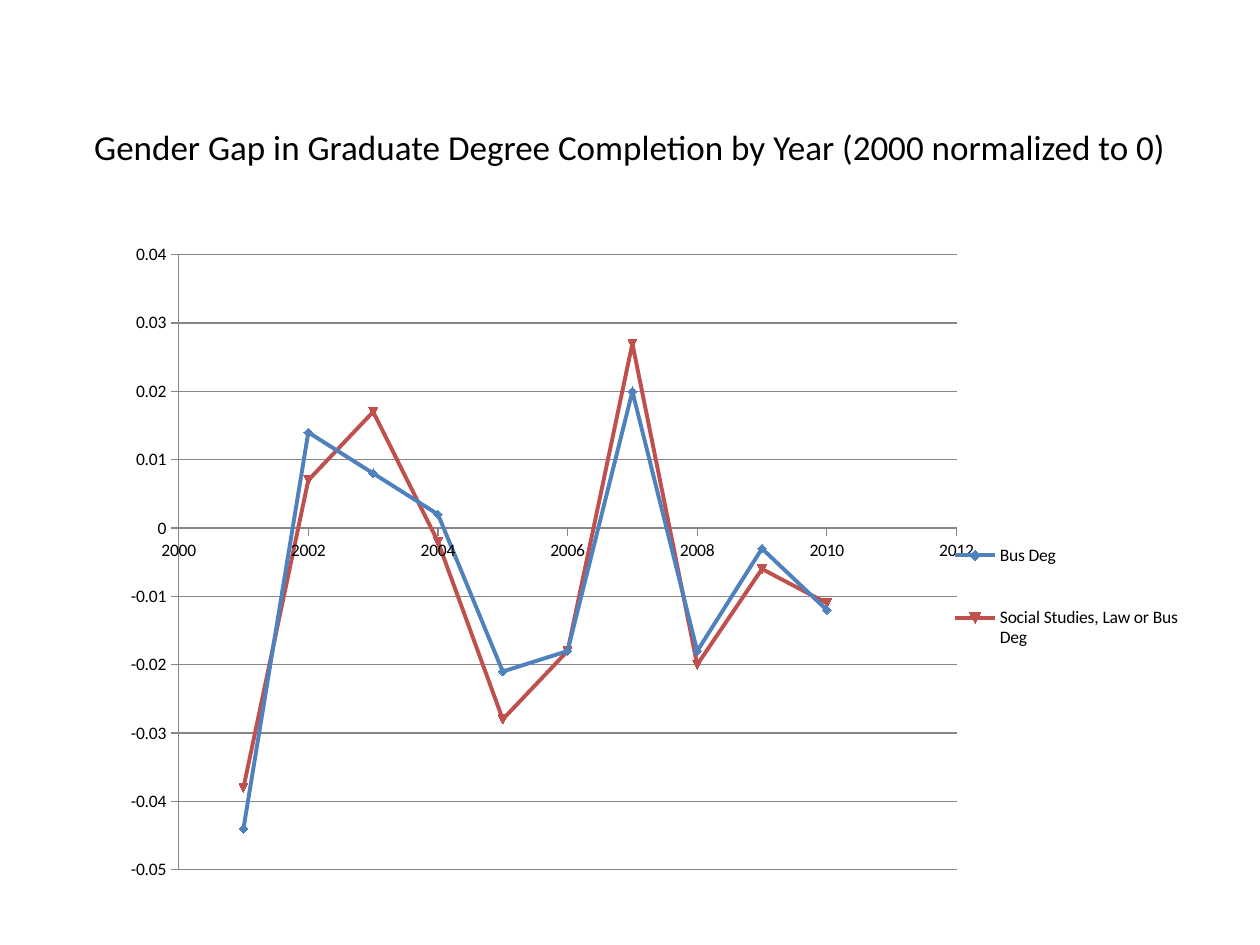
from lxml.etree import SubElement
from pptx import Presentation
from pptx.chart.data import XyChartData
from pptx.dml.color import RGBColor
from pptx.enum.chart import XL_CHART_TYPE, XL_LEGEND_POSITION, XL_MARKER_STYLE, XL_TICK_MARK
from pptx.enum.text import MSO_ANCHOR, PP_ALIGN
from pptx.oxml.ns import qn
from pptx.util import Inches, Pt

COLORS = {"text": "000000", "grid": "868686", "business": "4F81BD", "social": "C0504D"}
FONT = "Calibri"
YEARS = range(2001, 2011)
SERIES = [
    ("Bus Deg", "business", XL_MARKER_STYLE.DIAMOND,
     [-0.044, 0.014, 0.008, 0.002, -0.021, -0.018, 0.02, -0.018, -0.003, -0.012]),
    ("Social Studies, Law or Bus Deg", "social", None,
     [-0.038, 0.007, 0.017, -0.002, -0.028, -0.018, 0.027, -0.02, -0.006, -0.011]),
]


def color(name):
    return RGBColor.from_string(COLORS[name])


def style_font(font, size):
    font.name = FONT
    font.size = Pt(size)
    font.color.rgb = color("text")


def set_layout(parent, before, fractions, inner=False):
    """Place a chart part by fractions of the chart: left, top, width, height."""
    for old in parent.findall(qn("c:layout")):
        parent.remove(old)
    layout = SubElement(parent, qn("c:layout"))
    manual = SubElement(layout, qn("c:manualLayout"))
    settings = [("layoutTarget", "inner")] if inner else []
    settings += [("xMode", "edge"), ("yMode", "edge")]
    settings += zip("xywh", fractions)
    for tag, value in settings:
        SubElement(manual, qn(f"c:{tag}")).set("val", str(value))
    parent.insert(before, layout)


def add_title(page, left, top, width, height):
    box = page.shapes.add_textbox(left, top, width, height)
    frame = box.text_frame
    frame.text = "Gender Gap in Graduate Degree Completion by Year (2000 normalized to 0)"
    frame.word_wrap = True
    frame.vertical_anchor = MSO_ANCHOR.BOTTOM
    frame.margin_bottom = Inches(0.09)
    para = frame.paragraphs[0]
    para.alignment = PP_ALIGN.CENTER
    style_font(para.runs[0].font, 20)


def style_axis(axis, low, high, step, number_format):
    axis.minimum_scale, axis.maximum_scale, axis.major_unit = low, high, step
    axis.major_tick_mark = XL_TICK_MARK.OUTSIDE
    axis.minor_tick_mark = XL_TICK_MARK.NONE
    axis.tick_labels.number_format = number_format
    axis.tick_labels.number_format_is_linked = False
    axis.format.line.color.rgb = color("grid")
    axis.format.line.width = Pt(0.75)


def add_gap_chart(page, left, top, width, height):
    data = XyChartData()
    for name, _, _, values in SERIES:
        series = data.add_series(name)
        for year, value in zip(YEARS, values):
            series.add_data_point(year, value)
    chart = page.shapes.add_chart(
        XL_CHART_TYPE.XY_SCATTER_LINES, left, top, width, height, data).chart
    chart.has_title = False
    style_font(chart.font, 10)

    # Axes and gridlines
    style_axis(chart.category_axis, 2000, 2012, 2, "General")
    style_axis(chart.value_axis, -0.05, 0.04, 0.01, "General")
    chart.category_axis.has_major_gridlines = False
    chart.value_axis.has_major_gridlines = True
    grid_line = chart.value_axis.major_gridlines.format.line
    grid_line.color.rgb = color("grid")
    grid_line.width = Pt(0.75)

    # Lines and markers
    plot = chart.plots[0]
    plot.vary_by_categories = False
    for series, (_, shade, marker, _) in zip(plot.series, SERIES):
        series.format.line.color.rgb = color(shade)
        series.format.line.width = Pt(2.25)
        series.marker.style = marker
        series.marker.size = 5
        series.marker.format.fill.solid()
        series.marker.format.fill.fore_color.rgb = color(shade)
        series.marker.format.line.color.rgb = color(shade)
        smooth = series._element.get_or_add_smooth()if hasattr(
            series._element, "get_or_add_smooth") else series._element.find(qn("c:smooth"))
        smooth.set("val", "0")

    # Legend and plot area
    chart.has_legend = True
    chart.legend.position = XL_LEGEND_POSITION.RIGHT
    chart.legend.include_in_layout = False
    style_font(chart.legend.font, 10)
    set_layout(chart.legend._element, 1, (0.78, 0.42, 0.21, 0.28))
    plot_area = chart._chartSpace.chart.plotArea
    set_layout(plot_area, 0, (0.102, 0.051, 0.686, 0.916), inner=True)


def main():
    deck = Presentation()
    deck.slide_width, deck.slide_height = Inches(10), Inches(7.5)
    page = deck.slides.add_slide(deck.slide_layouts[6])
    add_title(page, Inches(0), Inches(0.5), Inches(10), Inches(0.92))
    add_gap_chart(page, Inches(0.5), Inches(1.75), Inches(9), Inches(5.33))
    deck.save("out.pptx")


if __name__ == "__main__":
    main()
